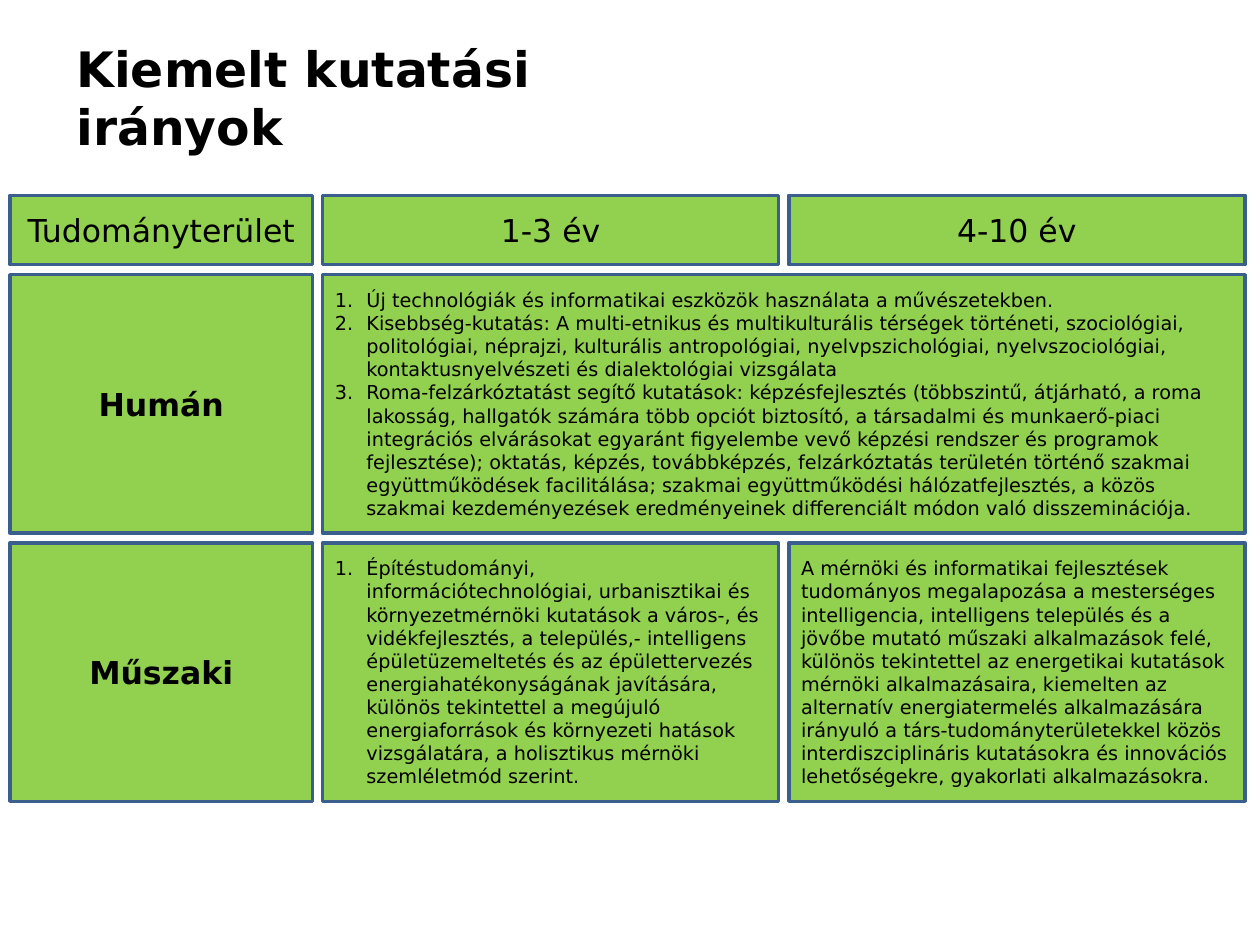
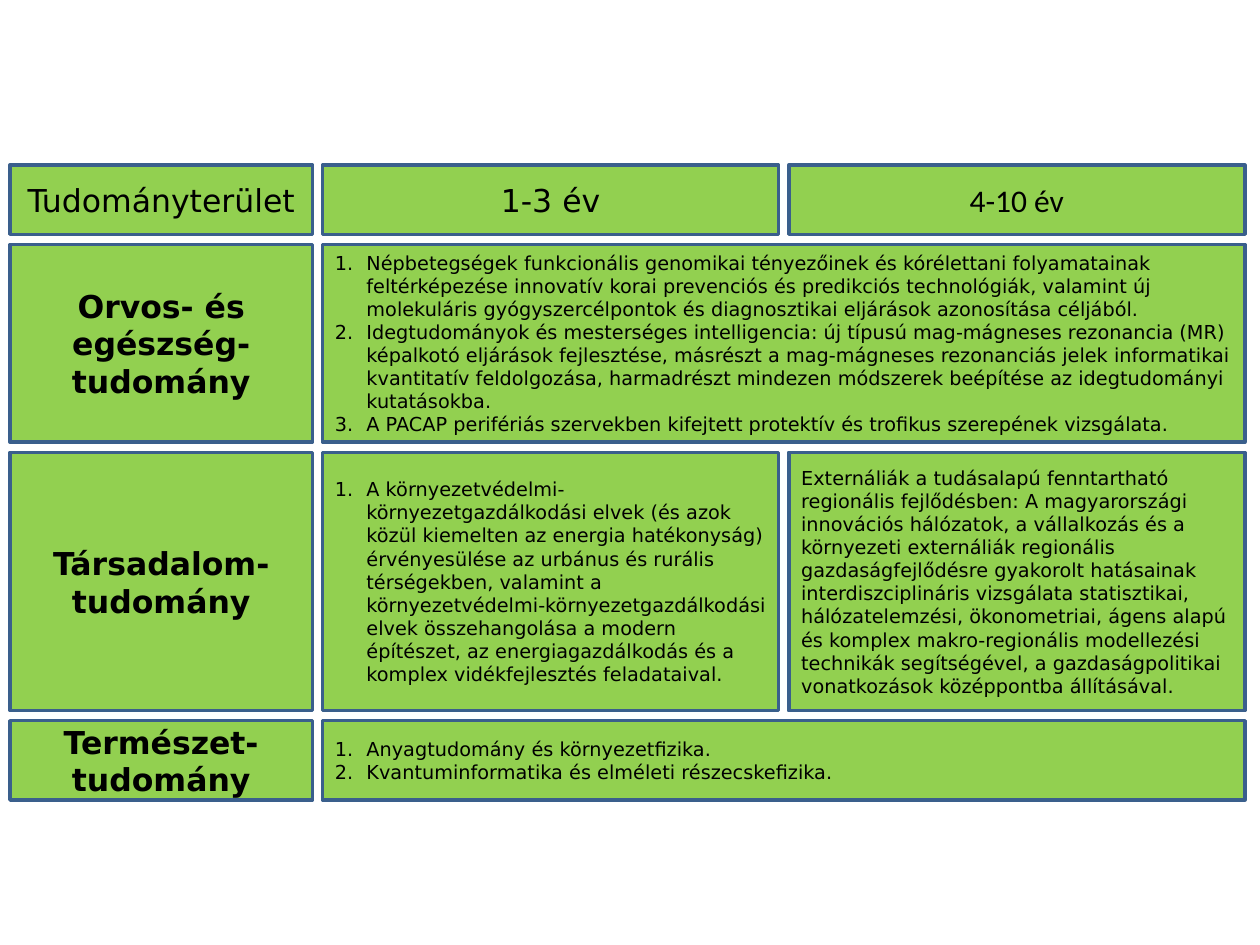
from lxml import etree
from pptx import Presentation
from pptx.dml.color import RGBColor
from pptx.enum.shapes import MSO_SHAPE
from pptx.enum.text import MSO_ANCHOR, PP_ALIGN
from pptx.oxml.ns import qn
from pptx.util import Inches, Pt

RECTANGLE = MSO_SHAPE.RECTANGLE
MIDDLE = MSO_ANCHOR.MIDDLE
LEFT, CENTER = PP_ALIGN.LEFT, PP_ALIGN.CENTER

COLORS = {"cell": "92D050", "border": "3A5F8C", "text": "000000"}
FONT = "DejaVu Sans"
GAP = 0.08
LABEL_WIDTH = 2.4
PERIOD_WIDTH = 3.62
HEADER_HEIGHT = 0.55
HEADERS = ["Tudományterület", "1-3 év", "4-10 év"]

SLIDES = [
    {
        "title": "Kiemelt kutatási irányok",
        "top": 1.55,
        "last_header_font": FONT,
        "rows": [
            ("Humán", 2.05, [[
                "Új technológiák és informatikai eszközök használata a művészetekben.",
                "Kisebbség-kutatás: A multi-etnikus és multikulturális térségek történeti, "
                "szociológiai, politológiai, néprajzi, kulturális antropológiai, "
                "nyelvpszichológiai, nyelvszociológiai, kontaktusnyelvészeti és "
                "dialektológiai vizsgálata",
                "Roma-felzárkóztatást segítő kutatások: képzésfejlesztés (többszintű, "
                "átjárható, a roma lakosság, hallgatók számára több opciót biztosító, a "
                "társadalmi és munkaerő-piaci integrációs elvárásokat egyaránt figyelembe "
                "vevő képzési rendszer és programok fejlesztése); oktatás, képzés, "
                "továbbképzés, felzárkóztatás területén történő szakmai együttműködések "
                "facilitálása; szakmai együttműködési hálózatfejlesztés, a közös szakmai "
                "kezdeményezések eredményeinek differenciált módon való disszeminációja.",
            ]]),
            ("Műszaki", 2.05, [
                ["Építéstudományi, információtechnológiai, urbanisztikai és "
                 "környezetmérnöki kutatások a város-, és vidékfejlesztés, a település,- "
                 "intelligens épületüzemeltetés és az épülettervezés "
                 "energiahatékonyságának javítására, különös tekintettel a megújuló "
                 "energiaforrások és környezeti hatások vizsgálatára, a holisztikus "
                 "mérnöki szemléletmód szerint."],
                "A mérnöki és informatikai fejlesztések tudományos megalapozása a "
                "mesterséges intelligencia, intelligens település és a jövőbe mutató "
                "műszaki alkalmazások felé, különös tekintettel az energetikai kutatások "
                "mérnöki alkalmazásaira, kiemelten az alternatív energiatermelés "
                "alkalmazására irányuló a társ-tudományterületekkel közös "
                "interdiszciplináris kutatásokra és innovációs lehetőségekre, gyakorlati "
                "alkalmazásokra.",
            ]),
        ],
    },
    {
        "title": None,
        "top": 1.31,
        "last_header_font": "Calibri",
        "rows": [
            ("Orvos- és egészség-tudomány", 1.57, [[
                "Népbetegségek funkcionális genomikai tényezőinek és kórélettani "
                "folyamatainak feltérképezése innovatív korai prevenciós és predikciós "
                "technológiák, valamint új molekuláris gyógyszercélpontok és "
                "diagnosztikai eljárások azonosítása céljából.",
                "Idegtudományok és mesterséges intelligencia: új típusú mag-mágneses "
                "rezonancia (MR) képalkotó eljárások fejlesztése, másrészt a "
                "mag-mágneses rezonanciás jelek informatikai kvantitatív feldolgozása, "
                "harmadrészt mindezen módszerek beépítése az idegtudományi kutatásokba.",
                "A PACAP perifériás szervekben kifejtett protektív és trofikus szerepének "
                "vizsgálata.",
            ]]),
            ("Társadalom-tudomány", 2.05, [
                ["A környezetvédelmi-környezetgazdálkodási elvek (és azok közül kiemelten "
                 "az energia hatékonyság) érvényesülése az urbánus és rurális "
                 "térségekben, valamint a környezetvédelmi-környezetgazdálkodási elvek "
                 "összehangolása a modern építészet, az energiagazdálkodás és a komplex "
                 "vidékfejlesztés feladataival."],
                "Externáliák a tudásalapú fenntartható regionális fejlődésben: A "
                "magyarországi innovációs hálózatok, a vállalkozás és a környezeti "
                "externáliák regionális gazdaságfejlődésre gyakorolt hatásainak "
                "interdiszciplináris vizsgálata statisztikai, hálózatelemzési, "
                "ökonometriai, ágens alapú és komplex makro-regionális modellezési "
                "technikák segítségével, a gazdaságpolitikai vonatkozások középpontba "
                "állításával.",
            ]),
            ("Természet-tudomány", 0.63, [[
                "Anyagtudomány és környezetfizika.",
                "Kvantuminformatika és elméleti részecskefizika.",
            ]]),
        ],
    },
]


def write_text(box, text, size, bold=False, align=LEFT, font=FONT):
    numbered = isinstance(text, list)
    frame = box.text_frame
    frame.word_wrap = True
    frame.vertical_anchor = MIDDLE
    frame.text = "\n".join(text) if numbered else text
    for para in frame.paragraphs:
        para.alignment = align
        if numbered:
            properties = para._p.get_or_add_pPr()
            properties.set("marL", str(Inches(0.25)))
            properties.set("indent", str(Inches(-0.25)))
            etree.SubElement(properties, qn("a:buAutoNum"), type="arabicPeriod")
        for span in para.runs:
            span.font.name = font
            span.font.size = Pt(size)
            span.font.bold = bold
            span.font.color.rgb = RGBColor.from_string(COLORS["text"])


def add_cell(page, left, top, width, height, text, size, **style):
    box = page.shapes.add_shape(
        RECTANGLE, Inches(left), Inches(top), Inches(width), Inches(height))
    box.shadow.inherit = False
    box.fill.solid()
    box.fill.fore_color.rgb = RGBColor.from_string(COLORS["cell"])
    box.line.color.rgb = RGBColor.from_string(COLORS["border"])
    box.line.width = Pt(2)
    write_text(box, text, size, **style)


deck = Presentation()
deck.slide_width = Inches(10)
deck.slide_height = Inches(7.5)
first_left = GAP + LABEL_WIDTH + GAP
column_lefts = [GAP, first_left, first_left + PERIOD_WIDTH + GAP]
column_widths = [LABEL_WIDTH, PERIOD_WIDTH, PERIOD_WIDTH]

for content in SLIDES:
    page = deck.slides.add_slide(deck.slide_layouts[6])
    if content["title"]:
        title_box = page.shapes.add_textbox(
            Inches(0.51), Inches(0.25), Inches(5.43), Inches(1.04))
        write_text(title_box, content["title"], 27.9, bold=True)

    top = content["top"]
    header_fonts = [FONT, FONT, content["last_header_font"]]
    for left, width, header, font in zip(column_lefts, column_widths, HEADERS, header_fonts):
        add_cell(page, left, top, width, HEADER_HEIGHT, header, 18, align=CENTER, font=font)
    top += HEADER_HEIGHT + GAP

    for field, height, directions in content["rows"]:
        add_cell(page, GAP, top, LABEL_WIDTH, height, field, 18, bold=True, align=CENTER)
        width = PERIOD_WIDTH if len(directions) == 2 else 2 * PERIOD_WIDTH + GAP
        for left, direction in zip(column_lefts[1:], directions):
            add_cell(page, left, top, width, height, direction, 11)
        top += height + GAP

deck.save("out.pptx")
